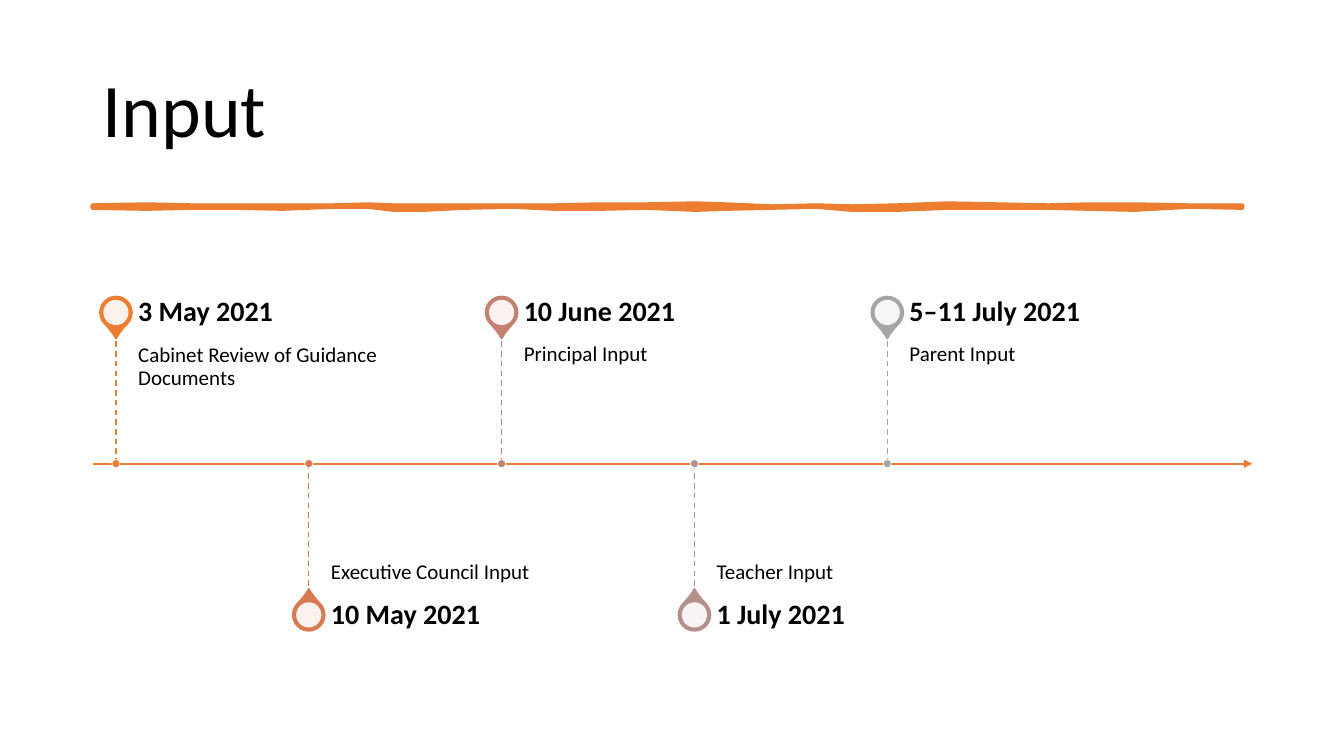
from dataclasses import dataclass

from lxml.etree import SubElement
from pptx import Presentation
from pptx.dml.color import RGBColor
from pptx.enum.dml import MSO_LINE
from pptx.enum.shapes import MSO_CONNECTOR, MSO_SHAPE
from pptx.enum.text import MSO_ANCHOR as Anchor, PP_ALIGN
from pptx.oxml.ns import qn
from pptx.util import Inches, Pt


@dataclass(frozen=True)
class Theme:
    font: str = "Calibri"
    text: str = "000000"
    paper: str = "FFFFFF"
    accent: str = "ED7D31"
    title_size: float = 54
    date_size: float = 20
    detail_size: float = 15


@dataclass(frozen=True)
class Milestone:
    date: str
    detail: str
    color: str


@dataclass(frozen=True)
class StrokePoint:
    x: float
    top: float
    bottom: float


THEME = Theme()
AXIS_LEFT, AXIS_RIGHT, AXIS_Y = 0.92, 12.42, 4.6
FIRST_X, STEP_X = 1.15, 1.9125
PIN_OFFSET, STEM_LENGTH = 1.5, 1.28
PIN_SIZE, HOLE_SIZE, DOT_SIZE = 0.32, 0.25, 0.08
LABEL_GAP, LABEL_WIDTH, DATE_HEIGHT = 0.22, 3.19, 0.45

MILESTONES = [
    Milestone("3 May 2021", "Cabinet Review of Guidance Documents", "ED7D31"),
    Milestone("10 May 2021", "Executive Council Input", "D87A51"),
    Milestone("10 June 2021", "Principal Input", "C48170"),
    Milestone("1 July 2021", "Teacher Input", "B4908B"),
    Milestone("5–11 July 2021", "Parent Input", "A5A5A5"),
]

BRUSH_STROKE = [
    StrokePoint(0.92, 2.04, 2.06),
    StrokePoint(1.45, 2.03, 2.07),
    StrokePoint(1.9, 2.04, 2.06),
    StrokePoint(2.35, 2.04, 2.06),
    StrokePoint(2.8, 2.04, 2.07),
    StrokePoint(3.3, 2.04, 2.05),
    StrokePoint(3.65, 2.03, 2.05),
    StrokePoint(3.9, 2.04, 2.08),
    StrokePoint(4.2, 2.04, 2.08),
    StrokePoint(4.6, 2.04, 2.06),
    StrokePoint(5.1, 2.04, 2.05),
    StrokePoint(5.5, 2.04, 2.07),
    StrokePoint(5.95, 2.03, 2.07),
    StrokePoint(6.4, 2.03, 2.06),
    StrokePoint(6.9, 2.02, 2.08),
    StrokePoint(7.2, 2.03, 2.07),
    StrokePoint(7.65, 2.05, 2.06),
    StrokePoint(8.1, 2.04, 2.05),
    StrokePoint(8.45, 2.05, 2.08),
    StrokePoint(8.9, 2.04, 2.08),
    StrokePoint(9.4, 2.02, 2.06),
    StrokePoint(9.9, 2.03, 2.06),
    StrokePoint(10.4, 2.04, 2.06),
    StrokePoint(10.8, 2.03, 2.07),
    StrokePoint(11.25, 2.03, 2.08),
    StrokePoint(11.8, 2.04, 2.05),
    StrokePoint(12.32, 2.04, 2.06),
]


def rgb(color: str) -> RGBColor:
    return RGBColor.from_string(color)


def write_text(shape, text: str, *, size: float, bold: bool = False,
               anchor: Anchor = Anchor.MIDDLE,
               insets: tuple = (0.1, 0.05, 0.1, 0.05)) -> None:
    frame = shape.text_frame
    frame.word_wrap = True
    frame.vertical_anchor = anchor
    (frame.margin_left, frame.margin_top,
     frame.margin_right, frame.margin_bottom) = map(Inches, insets)
    paragraph = frame.paragraphs[0]
    paragraph.text = text
    paragraph.alignment = PP_ALIGN.LEFT
    paragraph.line_spacing = 0.9
    font = paragraph.runs[0].font
    font.name, font.size, font.bold = THEME.font, Pt(size), bold
    font.color.rgb = rgb(THEME.text)


def add_label(slide, left: float, top: float, height: float, text: str, **style) -> None:
    box = slide.shapes.add_textbox(
        Inches(left), Inches(top), Inches(LABEL_WIDTH), Inches(height))
    write_text(box, text, **style)


def paint(shape, fill: str, line: str | None = None, width: float = 1) -> None:
    shape.shadow.inherit = False
    shape.fill.solid()
    shape.fill.fore_color.rgb = rgb(fill)
    if line is None:
        shape.line.fill.background()
    else:
        shape.line.color.rgb = rgb(line)
        shape.line.width = Pt(width)


def add_centred(slide, preset: MSO_SHAPE, x: float, y: float, size: float):
    return slide.shapes.add_shape(
        preset, Inches(x - size / 2), Inches(y - size / 2), Inches(size), Inches(size))


def add_line(slide, start: tuple, end: tuple, color: str, width: float):
    connector = slide.shapes.add_connector(
        MSO_CONNECTOR.STRAIGHT, *map(Inches, start + end))
    connector.line.color.rgb = rgb(color)
    connector.line.width = Pt(width)
    SubElement(connector._element.spPr, qn("a:effectLst"))
    return connector


def add_brush_stroke(slide) -> None:
    outline = [(point.x, point.top) for point in BRUSH_STROKE]
    outline += [(point.x, point.bottom) for point in reversed(BRUSH_STROKE)]
    vertices = [(Inches(x), Inches(y)) for x, y in outline]
    builder = slide.shapes.build_freeform(*vertices[0])
    builder.add_line_segments(vertices[1:], close=True)
    stroke = builder.convert_to_shape()
    paint(stroke, THEME.accent, THEME.accent, 3.25)
    SubElement(stroke.line._get_or_add_ln(), qn("a:round"))


def add_axis(slide) -> None:
    axis = add_line(slide, (AXIS_LEFT, AXIS_Y), (AXIS_RIGHT, AXIS_Y), THEME.accent, 1.5)
    SubElement(axis.line._get_or_add_ln(), qn("a:tailEnd"), type="triangle")


def add_milestone(slide, milestone: Milestone, x: float, above: bool) -> None:
    direction = -1 if above else 1
    pin_y = AXIS_Y + direction * PIN_OFFSET
    stem_end = AXIS_Y + direction * STEM_LENGTH
    label_left = x + LABEL_GAP

    pin = add_centred(slide, MSO_SHAPE.TEAR, x, pin_y, PIN_SIZE)
    pin.adjustments[0] = 1.15
    pin.rotation = 135 if above else 315
    paint(pin, milestone.color, milestone.color)

    hole = add_centred(slide, MSO_SHAPE.OVAL, x, pin_y, HOLE_SIZE)
    paint(hole, THEME.paper)
    hole_color = hole._element.spPr.find(qn("a:solidFill"))[0]
    SubElement(hole_color, qn("a:alpha"), val="90000")

    add_label(slide, label_left, min(AXIS_Y, stem_end), STEM_LENGTH, milestone.detail,
              size=THEME.detail_size,
              anchor=Anchor.TOP if above else Anchor.BOTTOM,
              insets=(0, 0.1, 0.1, 0.16) if above else (0, 0.16, 0, 0.1))
    add_label(slide, label_left, pin_y - DATE_HEIGHT / 2, DATE_HEIGHT, milestone.date,
              size=THEME.date_size, bold=True, insets=(0, 0, 0.14, 0))

    stem = add_line(slide, (x, AXIS_Y), (x, stem_end), milestone.color, 1)
    stem.line.dash_style = MSO_LINE.DASH
    dot = add_centred(slide, MSO_SHAPE.OVAL, x, AXIS_Y, DOT_SIZE)
    paint(dot, milestone.color, THEME.paper, 0.5)


def main() -> None:
    presentation = Presentation()
    presentation.slide_width, presentation.slide_height = Inches(13.33), Inches(7.5)
    slide = presentation.slides.add_slide(presentation.slide_layouts[5])
    title = slide.shapes.title
    title.left, title.top = Inches(0.92), Inches(0.4)
    title.width, title.height = Inches(11.5), Inches(1.45)
    write_text(title, "Input", size=THEME.title_size)
    add_brush_stroke(slide)
    add_axis(slide)
    for index, milestone in enumerate(MILESTONES):
        add_milestone(slide, milestone, FIRST_X + index * STEP_X, above=index % 2 == 0)
    presentation.save("out.pptx")


if __name__ == "__main__":
    main()
